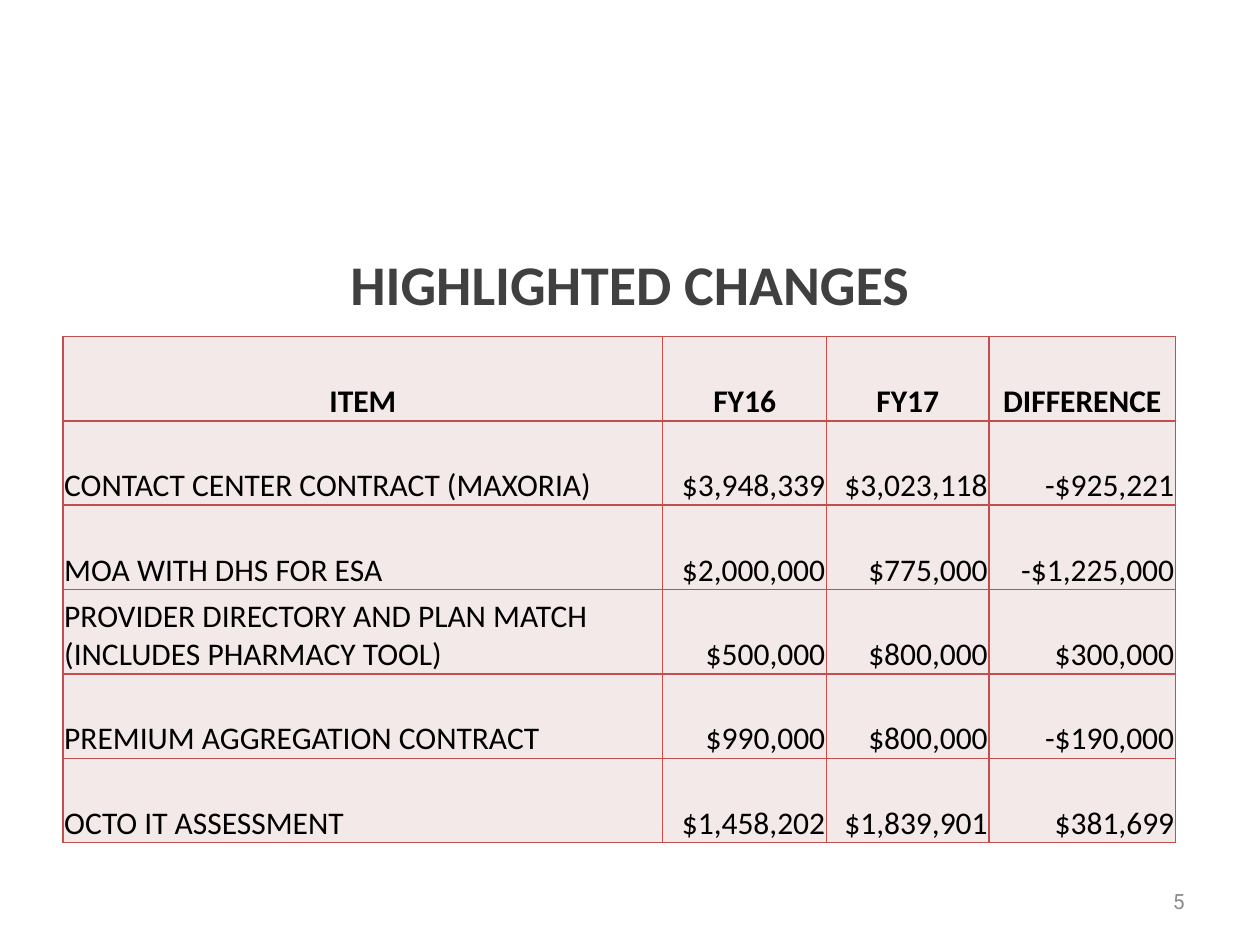
import pptx
import pptx.dml.color
import pptx.enum.text
import pptx.oxml
import pptx.oxml.ns
import pptx.util
from pptx.util import Inches

ALIGN = pptx.enum.text.PP_ALIGN
ANCHOR = pptx.enum.text.MSO_ANCHOR


class Theme:
    """Colours, fonts and type sizes."""
    fill = "F4E9E9"
    border = "C0504D"
    border_pt = 1
    title = dict(name="Calibri", size=32, bold=True, color="404040")
    header = dict(name="Calibri", size=18, bold=True, color="000000")
    body = dict(header, bold=False)
    number = dict(name="Roboto", size=12, bold=False, color="8C8C8C")


class Deck:
    def __init__(self, theme):
        self.theme = theme
        self.prs = pptx.Presentation()
        self.prs.slide_width, self.prs.slide_height = Inches(10), Inches(7.5)
        self.s = None

    def add_slide(self):
        self.s = self.prs.slides.add_slide(self.prs.slide_layouts[5])

    def set_text(self, tf, text, style, align, anchor=ANCHOR.MIDDLE):
        tf.word_wrap = True
        tf.vertical_anchor = anchor
        p = tf.paragraphs[0]
        p.alignment = align
        r = p.add_run()
        r.text = text
        values = dict(style, size=pptx.util.Pt(style["size"]))
        color = values.pop("color")
        for name, value in values.items():
            setattr(r.font, name, value)
        r.font.color.rgb = pptx.dml.color.RGBColor.from_string(color)

    def title(self, text, left, top, width, height):
        sp = self.s.shapes.title
        box = dict(left=left, top=top, width=width, height=height)
        for name, value in box.items():
            setattr(sp, name, Inches(value))
        self.set_text(sp.text_frame, text, self.theme.title, ALIGN.CENTER)

    def text(self, text, left, top, width, height, style, align):
        sp = self.s.shapes.add_textbox(*map(Inches, (left, top, width, height)))
        self.set_text(sp.text_frame, text, style, align)

    def border(self, cell):
        tcPr = cell._tc.get_or_add_tcPr()
        width = pptx.util.Pt(self.theme.border_pt)
        for side in ("lnL", "lnR", "lnT", "lnB"):
            tcPr.append(pptx.oxml.parse_xml(
                f'<a:{side} {pptx.oxml.ns.nsdecls("a")} w="{width}"><a:solidFill>'
                f'<a:srgbClr val="{self.theme.border}"/></a:solidFill></a:{side}>'))

    def table(self, rows, left, top, widths, row_height):
        size = (sum(widths), row_height * len(rows))
        frame = self.s.shapes.add_table(
            len(rows), len(widths), *map(Inches, (left, top, *size)))
        table = frame.table
        for col, width in zip(table.columns, widths):
            col.width = Inches(width)
        margins = dict(margin_left=0.01, margin_right=0.01,
                       margin_top=0.01, margin_bottom=0)
        for i, row in enumerate(rows):
            table.rows[i].height = Inches(row_height)
            for j, text in enumerate(row):
                cell = table.cell(i, j)
                for name, value in margins.items():
                    setattr(cell, name, Inches(value))
                cell.vertical_anchor = ANCHOR.BOTTOM
                self.border(cell)
                cell.fill.solid()
                cell.fill.fore_color.rgb = pptx.dml.color.RGBColor.from_string(
                    self.theme.fill)
                if i == 0:
                    style, align = self.theme.header, ALIGN.CENTER
                else:
                    style = self.theme.body
                    align = ALIGN.RIGHT if j else ALIGN.LEFT
                self.set_text(cell.text_frame, text, style, align, ANCHOR.BOTTOM)


ROWS = [
    ("ITEM", "FY16", "FY17", "DIFFERENCE"),
    ("CONTACT CENTER CONTRACT (MAXORIA)", "$3,948,339", "$3,023,118", "-$925,221"),
    ("MOA WITH DHS FOR ESA", "$2,000,000", "$775,000", "-$1,225,000"),
    ("PROVIDER DIRECTORY AND PLAN MATCH (INCLUDES PHARMACY TOOL)",
     "$500,000", "$800,000", "$300,000"),
    ("PREMIUM AGGREGATION CONTRACT", "$990,000", "$800,000", "-$190,000"),
    ("OCTO IT ASSESSMENT", "$1,458,202", "$1,839,901", "$381,699"),
]


def main():
    deck = Deck(Theme())
    deck.add_slide()

    # Title
    deck.title("HIGHLIGHTED CHANGES", 0.5, 1.75, 9, 1)

    # Budget comparison
    deck.table(ROWS, 0.5, 2.67, (4.76, 1.3, 1.29, 1.48), 0.67)

    # Slide number
    deck.text("5", 7.17, 6.95, 2.33, 0.4, deck.theme.number, ALIGN.RIGHT)

    deck.prs.save("out.pptx")


if __name__ == "__main__":
    main()
